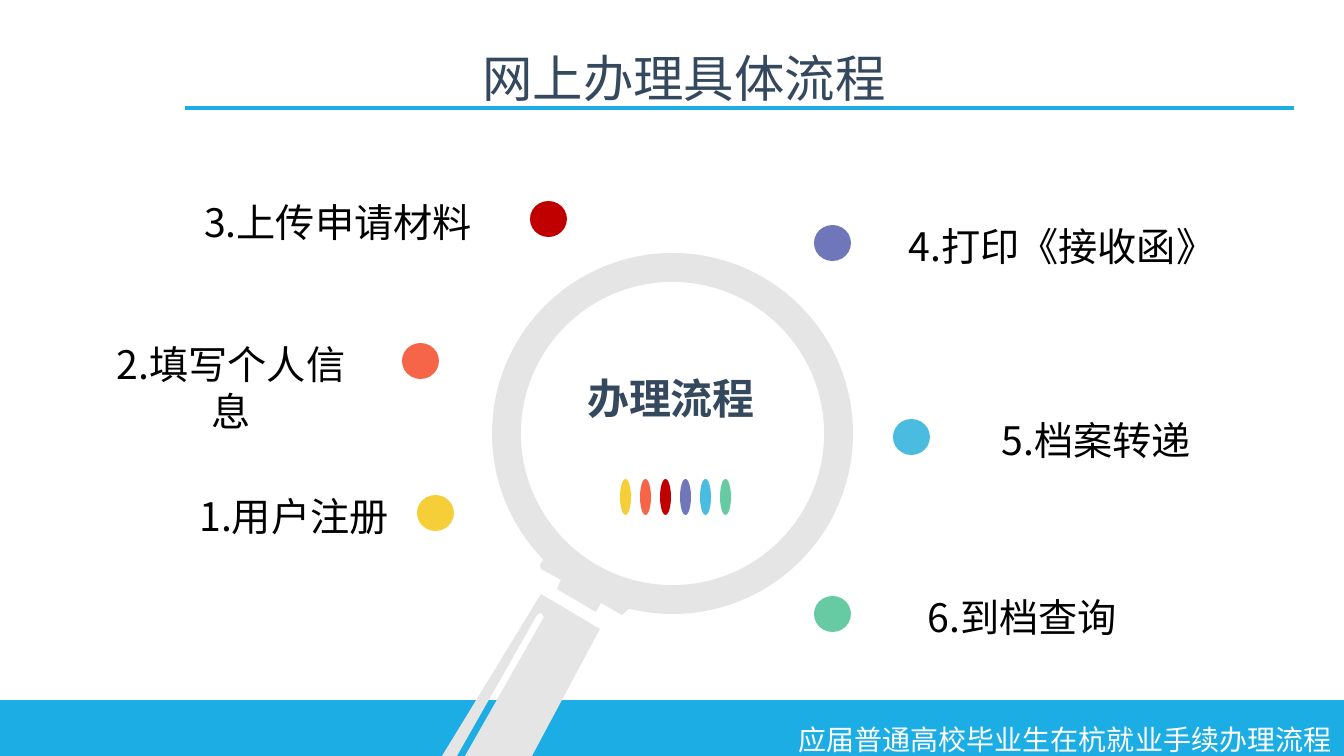
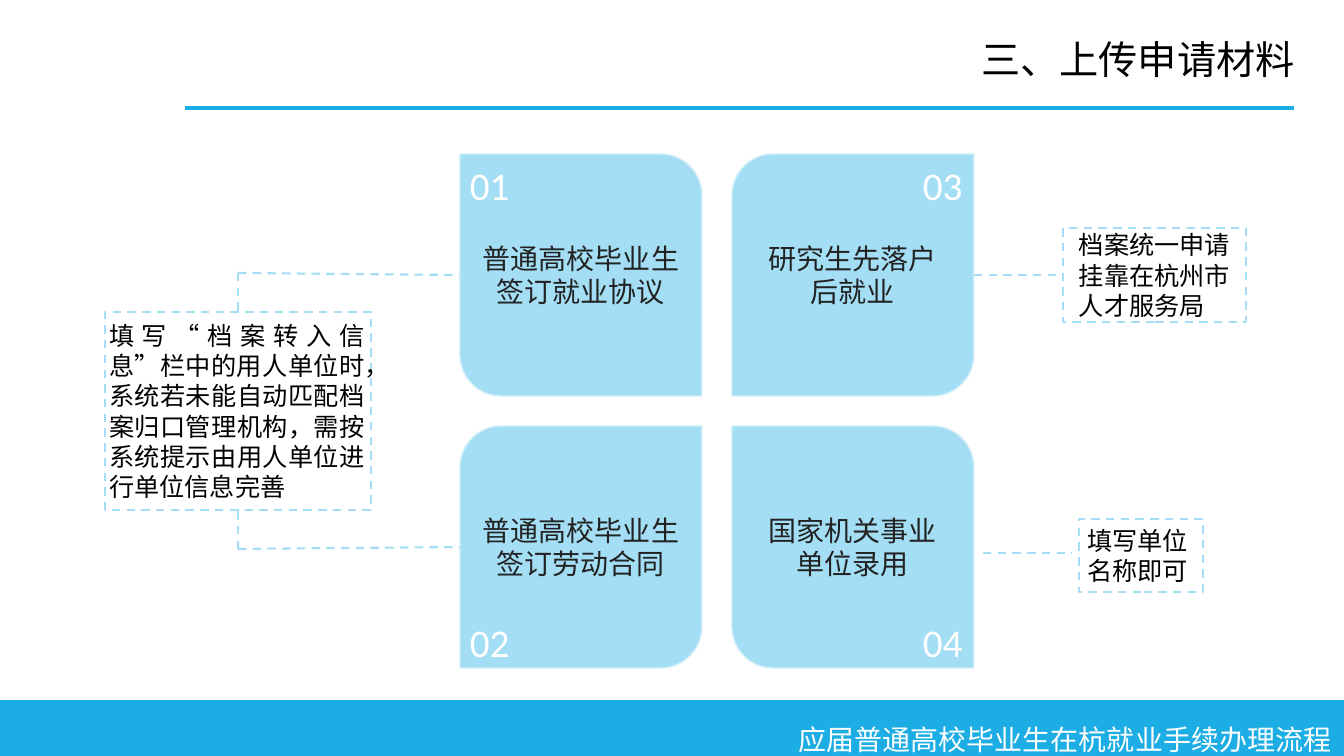
import dataclasses
import typing

import lxml.etree
import pptx
import pptx.dml.color
import pptx.enum.dml
import pptx.enum.shapes
import pptx.enum.text
import pptx.oxml.ns
import pptx.util

EMU_PER_PX = 12192000 / 1344
COLORS = {
    "band": "1CADE4", "white": "FFFFFF", "black": "000000", "navy": "34485E",
    "yellow": "F6CF38", "orange": "F66547", "red": "C00000", "purple": "6F76BA",
    "blue": "49BCE0", "green": "66CAA3", "lens": "E5E5E5",
    "tile": "A4DEF4", "tile_edge": "D2EFFA", "tile_text": "222222",
}
CJK_FONT = "Noto Sans CJK SC"
LINE_HEIGHT = 1.2
PRESET = pptx.enum.shapes.MSO_SHAPE
ALIGN = pptx.enum.text.PP_ALIGN
ANCHOR = pptx.enum.text.MSO_ANCHOR


class Box(typing.NamedTuple):
    left: int
    top: int
    width: int
    height: int


@dataclasses.dataclass(frozen=True)
class Step:
    text: str
    color: str
    dot_x: int
    dot_y: int
    label_center: int
    label_width: int


@dataclasses.dataclass(frozen=True)
class Tile:
    number: str
    text: str
    column: int
    row: int


@dataclasses.dataclass(frozen=True)
class Note:
    text: str
    box: Box
    inset_left: int
    inset_right: int
    align: typing.Any = ALIGN.LEFT


STEPS = [
    Step("1.用户注册", "yellow", 435, 513, 294, 190),
    Step("2.填写个人信息", "orange", 420, 361, 231, 264),
    Step("3.上传申请材料", "red", 548, 219, 338, 290),
    Step("4.打印《接收函》", "purple", 832, 243, 1062, 326),
    Step("5.档案转递", "blue", 911, 437, 1096, 220),
    Step("6.到档查询", "green", 832, 614, 1022, 220),
]
TILES = [
    Tile("01", "普通高校毕业生签订就业协议", 0, 0),
    Tile("02", "普通高校毕业生签订劳动合同", 0, 1),
    Tile("03", "研究生先落户\n后就业", 1, 0),
    Tile("04", "国家机关事业\n单位录用", 1, 1),
]
COMPLETION_NOTE = Note(
    "填写“档案转入信息”栏中的用人单位时，系统若未能自动匹配档案归口管理机构，"
    "需按系统提示由用人单位进行单位信息完善",
    Box(105, 312, 266, 198), 4, 6, ALIGN.JUSTIFY)
ARCHIVE_NOTE = Note("档案统一申请挂靠在杭州市人才服务局", Box(1063, 228, 183, 94), 16, 13)
EMPLOYER_NOTE = Note("填写单位名称即可", Box(1079, 519, 124, 73), 8, 8)

# Magnifier outlines below the lens
COLLAR = [(548, 552), (540, 565), (541, 569), (561, 580), (557, 589), (596, 612),
          (601, 603), (622, 615), (630, 608), (600, 580), (560, 555)]
HANDLE = [(541, 594), (600, 629), (532, 756), (465, 756), (544, 617),
          (541, 613), (537, 615), (457, 756), (442, 756)]


def px(length: float) -> pptx.util.Emu:
    return pptx.util.Emu(round(length * EMU_PER_PX))


def rgb(name: str) -> pptx.dml.color.RGBColor:
    return pptx.dml.color.RGBColor.from_string(COLORS[name])


def place(shape, box: Box) -> None:
    shape.left, shape.top, shape.width, shape.height = map(px, box)


def write_text(shape, text: str, *, size: int, color: str = "black", font: str = CJK_FONT,
               bold: bool = False, align=ALIGN.CENTER, anchor=ANCHOR.TOP,
               inset_left: int = 0, inset_right: int = 0) -> None:
    """Write one paragraph per line of text."""
    frame = shape.text_frame
    frame.word_wrap = True
    frame.auto_size = pptx.enum.text.MSO_AUTO_SIZE.NONE
    frame.vertical_anchor = anchor
    frame.margin_left, frame.margin_right = px(inset_left), px(inset_right)
    frame.margin_top = frame.margin_bottom = 0
    for index, line in enumerate(text.split("\n")):
        paragraph = frame.add_paragraph() if index else frame.paragraphs[0]
        paragraph.alignment = align
        paragraph.line_spacing = pptx.util.Pt(round(size * LINE_HEIGHT, 1))
        run = paragraph.add_run()
        run.text = line
        run.font.size = pptx.util.Pt(size)
        run.font.bold = bold
        run.font.name = font
        run.font.color.rgb = rgb(color)
        properties = run.font._element
        lxml.etree.SubElement(properties, pptx.oxml.ns.qn("a:ea"), typeface=CJK_FONT)


def add_label(slide, box: Box, text: str, **text_format) -> None:
    write_text(slide.shapes.add_textbox(*map(px, box)), text, **text_format)


def paint(shape, fill: str | None, edge: str | None = None) -> None:
    shape.shadow.inherit = False
    if fill:
        shape.fill.solid()
        shape.fill.fore_color.rgb = rgb(fill)
    else:
        shape.fill.background()
    if edge:
        shape.line.color.rgb = rgb(edge)
    else:
        shape.line.fill.background()


def add_preset(slide, preset, box: Box, fill: str | None, edge: str | None = None):
    shape = slide.shapes.add_shape(preset, *map(px, box))
    paint(shape, fill, edge)
    return shape


def add_outline(slide, points: list[tuple[int, int]], fill: str) -> None:
    builder = slide.shapes.build_freeform(*points[0], scale=EMU_PER_PX)
    builder.add_line_segments(points[1:], close=True)
    paint(builder.convert_to_shape(), fill)


def add_line(slide, start: tuple[int, int], end: tuple[int, int], color: str,
             width: float, dashed: bool = False):
    connector = slide.shapes.add_connector(
        pptx.enum.shapes.MSO_CONNECTOR.STRAIGHT, *map(px, start + end))
    connector.line.color.rgb = rgb(color)
    connector.line.width = pptx.util.Pt(width)
    if dashed:
        connector.line.dash_style = pptx.enum.dml.MSO_LINE.DASH
    lxml.etree.SubElement(connector.element.spPr, pptx.oxml.ns.qn("a:effectLst"))
    return connector


def add_dashed_line(slide, start: tuple[int, int], end: tuple[int, int]):
    return add_line(slide, start, end, "tile", 1.5, dashed=True)


def add_note(slide, note: Note):
    shape = add_preset(slide, PRESET.RECTANGLE, note.box, None, "tile")
    shape.line.width = pptx.util.Pt(1.5)
    shape.line.dash_style = pptx.enum.dml.MSO_LINE.DASH
    write_text(shape, note.text, size=18, font="Calibri", align=note.align,
               anchor=ANCHOR.MIDDLE, inset_left=note.inset_left,
               inset_right=note.inset_right)
    return shape


def set_title(slide, box: Box, text: str, **text_format) -> None:
    place(slide.shapes.title, box)
    write_text(slide.shapes.title, text, **text_format)


def furnish_layout(slide) -> None:
    """Draw the band, footer and title rule, then move them to the layout."""
    layout = slide.slide_layout
    for placeholder in list(layout.placeholders):
        if placeholder.placeholder_format.idx == 0:
            place(placeholder, Box(185, 35, 1109, 62))
        else:
            placeholder.element.getparent().remove(placeholder.element)
    add_preset(slide, PRESET.RECTANGLE, Box(0, 700, 1344, 56), "band")
    add_line(slide, (185, 108), (1294, 108), "band", 3.5)
    add_label(slide, Box(786, 722, 558, 34), "应届普通高校毕业生在杭就业手续办理流程",
              size=20, color="white", font="Calibri")
    for shape in list(slide.shapes):
        if not shape.is_placeholder:
            layout.shapes.element.append(shape.element)


def build_process(slide) -> None:
    set_title(slide, Box(414, 47, 540, 61), "网上办理具体流程",
              size=36, color="navy", font="Arial")
    # Magnifier
    lens = add_preset(slide, PRESET.DONUT, Box(492, 253, 361, 361), "lens")
    lens.adjustments[0] = 0.08
    add_outline(slide, COLLAR, "lens")
    add_outline(slide, HANDLE, "lens")
    add_label(slide, Box(512, 370, 318, 56), "办理流程", size=30, color="navy",
              font="Arial Narrow", bold=True, anchor=ANCHOR.MIDDLE)
    # Steps around the lens, with a matching bar inside it
    for index, step in enumerate(STEPS):
        add_preset(slide, PRESET.OVAL, Box(620 + 20 * index, 479, 11, 36), step.color)
        add_preset(slide, PRESET.OVAL, Box(step.dot_x - 18, step.dot_y - 18, 37, 36),
                   step.color)
        left = step.label_center - step.label_width // 2
        add_label(slide, Box(left, step.dot_y - 21, step.label_width, 48),
                  step.text, size=28)


def build_materials(slide) -> None:
    set_title(slide, Box(960, 35, 356, 50), "三、上传申请材料", size=28)
    # Two by two tiles with their numbers in the outer corners
    side, gap, corner = 242, 30, 0.17
    for tile in TILES:
        left = 460 + tile.column * (side + gap)
        top = 154 + tile.row * (side + gap)
        shape = add_preset(slide, PRESET.ROUND_2_DIAG_RECTANGLE,
                           Box(left, top, side, side), "tile", "tile_edge")
        shape.line.width = pptx.util.Pt(1)
        on_main_diagonal = tile.column == tile.row
        shape.adjustments[0] = 0 if on_main_diagonal else corner
        shape.adjustments[1] = corner if on_main_diagonal else 0
        write_text(shape, tile.text, size=20, color="tile_text", anchor=ANCHOR.MIDDLE,
                   inset_left=5, inset_right=5)
        add_label(slide, Box(left + 10 + 451 * tile.column - 270 * tile.column,
                             top + 7 + 185 * tile.row, 48, 48),
                  tile.number, size=28, color="white", font="Calibri", align=ALIGN.LEFT)
    # Notes and their dashed links
    completion = add_note(slide, COMPLETION_NOTE)
    archive = add_note(slide, ARCHIVE_NOTE)
    add_note(slide, EMPLOYER_NOTE)
    add_dashed_line(slide, (974, 275), (1063, 275)).end_connect(archive, 1)
    add_dashed_line(slide, (983, 553), (1072, 553))
    for site, edge, turn, tile_middle in ((0, 312, 273, 275), (2, 510, 549, 547)):
        add_dashed_line(slide, (238, turn), (238, edge)).end_connect(completion, site)
        add_dashed_line(slide, (238, turn), (460, tile_middle))


def main() -> None:
    presentation = pptx.Presentation()
    presentation.slide_width, presentation.slide_height = px(1344), px(756)
    layout = presentation.slide_layouts[5]
    process, materials = (presentation.slides.add_slide(layout) for _ in range(2))
    furnish_layout(process)
    build_process(process)
    build_materials(materials)
    presentation.save("out.pptx")


if __name__ == "__main__":
    main()
